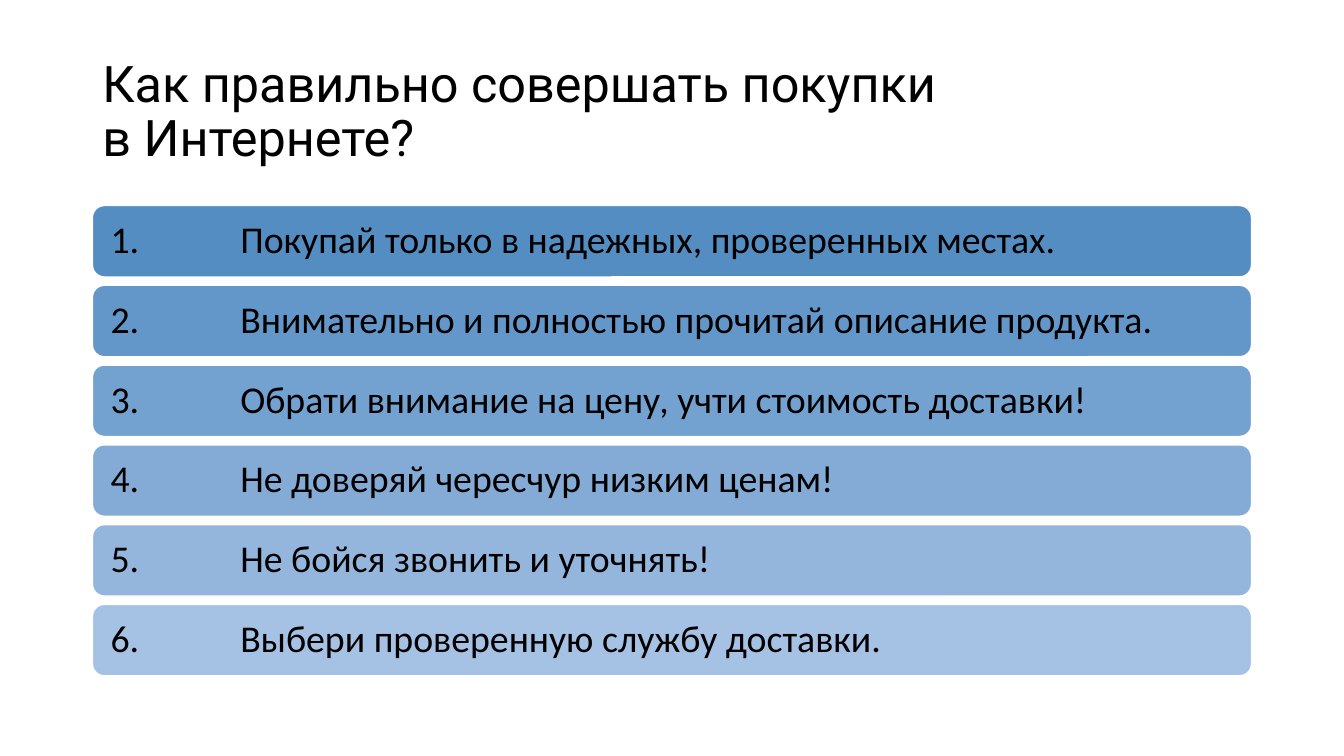
from lxml.etree import SubElement
from pptx import Presentation
from pptx.dml.color import RGBColor
from pptx.enum.shapes import MSO_SHAPE
from pptx.enum.text import MSO_ANCHOR, MSO_AUTO_SIZE, PP_ALIGN
from pptx.oxml.ns import qn
from pptx.util import Cm, Pt

TITLE = "Как правильно совершать покупки \vв Интернете?"
TIPS = [
    ("Покупай только в надежных, проверенных местах.", "tip1"),
    ("Внимательно и полностью прочитай описание продукта.", "tip2"),
    ("Обрати внимание на цену, учти стоимость доставки!", "tip3"),
    ("Не доверяй чересчур низким ценам!", "tip4"),
    ("Не бойся звонить и уточнять!", "tip5"),
    ("Выбери проверенную службу доставки.", "tip6"),
]
COLORS = {
    "text": "000000",
    "outline": "FFFFFF",
    "tip1": "538DC1",
    "tip2": "6397C9",
    "tip3": "73A1D0",
    "tip4": "84ABD6",
    "tip5": "94B6DD",
    "tip6": "A5C1E3",
}
LEFT, WIDTH = 2.33, 29.21
TITLE_TOP, TITLE_HEIGHT = 1.01, 3.68
BAR_TOP, BAR_HEIGHT, BAR_STEP = 5.18, 1.8, 2.01
BAR_INSET = 0.37
TIP_TAB = 3.27


def color(name):
    return RGBColor.from_string(COLORS[name])


def write(shape, text, *, font, size, inset=0.25, tab=None):
    frame = shape.text_frame
    frame.word_wrap = True
    frame.auto_size = MSO_AUTO_SIZE.NONE
    frame.vertical_anchor = MSO_ANCHOR.MIDDLE
    frame.margin_left = frame.margin_right = Cm(inset)
    frame.text = text
    paragraph = frame.paragraphs[0]
    paragraph.alignment = PP_ALIGN.LEFT
    paragraph.line_spacing = 0.9
    if tab:
        stops = SubElement(paragraph._p.get_or_add_pPr(), qn("a:tabLst"))
        SubElement(stops, qn("a:tab"), pos=str(Cm(tab)), algn="l")
    for run in paragraph.runs:
        run.font.name = font
        run.font.size = Pt(size)
        run.font.color.rgb = color("text")


def add_tip(slide, index, tip, fill):
    bar = slide.shapes.add_shape(
        MSO_SHAPE.ROUNDED_RECTANGLE,
        Cm(LEFT), Cm(BAR_TOP + index * BAR_STEP), Cm(WIDTH), Cm(BAR_HEIGHT),
    )
    bar.shadow.inherit = False
    bar.fill.solid()
    bar.fill.fore_color.rgb = color(fill)
    bar.line.color.rgb = color("outline")
    bar.line.width = Pt(1)
    write(bar, f"{index + 1}. \t{tip}", font="Calibri", size=27,
          inset=BAR_INSET, tab=TIP_TAB)


def main():
    deck = Presentation()
    deck.slide_width, deck.slide_height = Cm(33.87), Cm(19.05)
    slide = deck.slides.add_slide(deck.slide_layouts[5])

    title = slide.shapes.title
    title.left, title.top = Cm(LEFT), Cm(TITLE_TOP)
    title.width, title.height = Cm(WIDTH), Cm(TITLE_HEIGHT)
    write(title, TITLE, font="Roboto", size=36)

    for index, (tip, fill) in enumerate(TIPS):
        add_tip(slide, index, tip, fill)

    deck.save("out.pptx")


if __name__ == "__main__":
    main()
